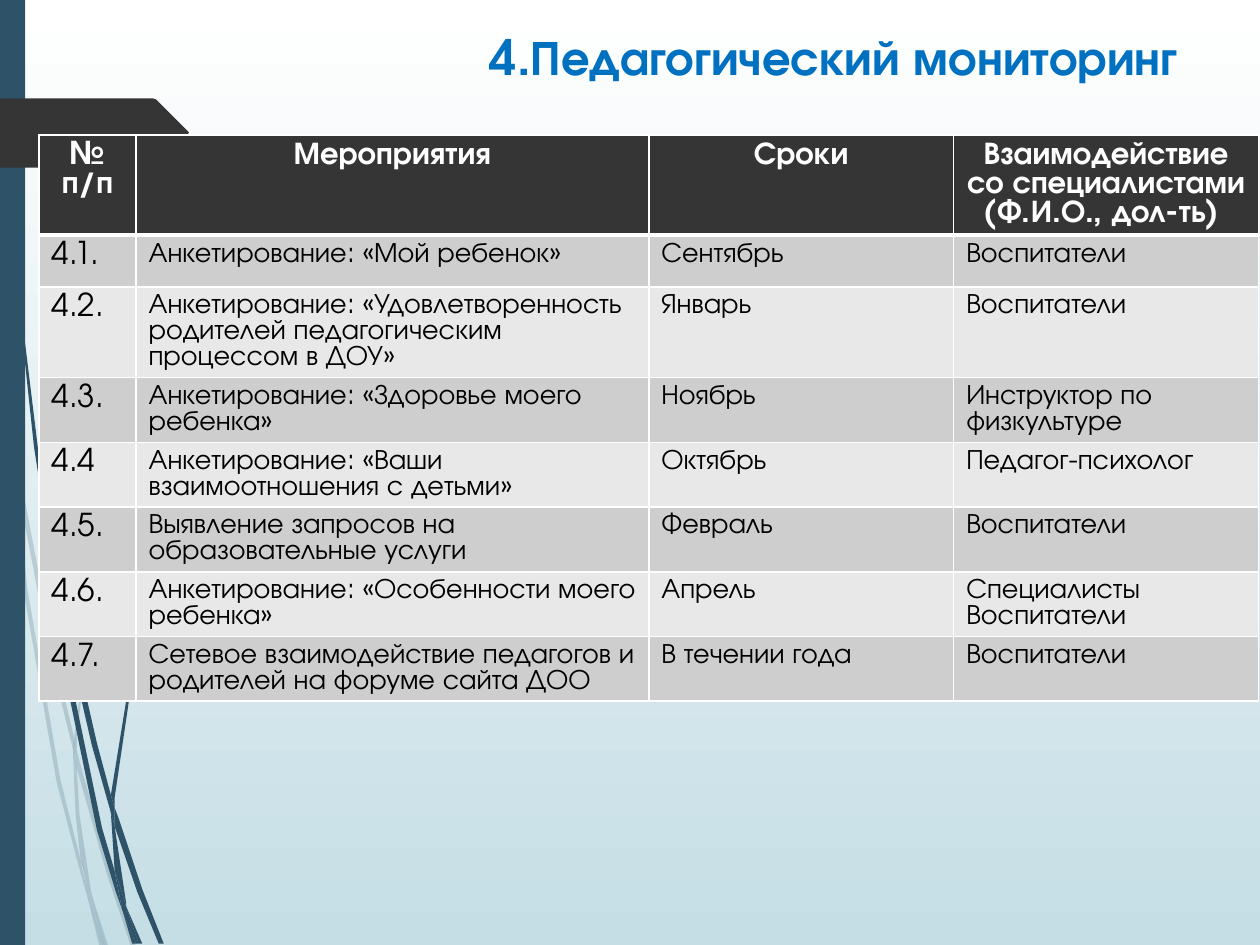
from lxml.etree import SubElement
from pptx import Presentation
from pptx.dml.color import RGBColor
from pptx.enum.shapes import MSO_SHAPE
from pptx.enum.text import MSO_ANCHOR, PP_ALIGN
from pptx.oxml.ns import qn
from pptx.util import Inches, Pt

WHITE = RGBColor(0xFF, 0xFF, 0xFF)
BLACK = RGBColor(0x00, 0x00, 0x00)
PALE_BLUE = RGBColor(0xC5, 0xDE, 0xE5)
NAVY = RGBColor(0x2E, 0x53, 0x69)
CHARCOAL = RGBColor(0x35, 0x35, 0x35)
TITLE_BLUE = RGBColor(0x00, 0x70, 0xC0)
ROW_FILLS = [RGBColor(0xCE, 0xCE, 0xCE), RGBColor(0xE8, 0xE8, 0xE8)]
FONT = "TeX Gyre Adventor"

# Outlines are in hundredths of an inch.
PALE_STEMS = [
    [(8, 350), (6, 322), (0, 282), (0, 299), (7, 344)],
    [(40, 522), (59, 599), (59, 586), (43, 520), (10, 345), (12, 376)],
    [(64, 607), (61, 596), (61, 610), (85, 694), (104, 751), (108, 751), (88, 692)],
    [(83, 751), (86, 751), (73, 711)],
    [(64, 683), (48, 619), (22, 469), (12, 376), (8, 350), (19, 470), (45, 621),
     (64, 693), (70, 714), (69, 707)],
    [(58, 599), (60, 646), (64, 683), (67, 692), (73, 711), (72, 706), (63, 646),
     (61, 610), (61, 608)],
    [(61, 584), (76, 462), (111, 349), (159, 245), (187, 198), (201, 175), (217, 154),
     (217, 153), (201, 175), (186, 197), (158, 244), (110, 348), (75, 461), (59, 584),
     (59, 586), (61, 596)],
    [(70, 714), (79, 751), (82, 751)],
    [(61, 608), (61, 610), (61, 596), (59, 586), (58, 599)],
    [(67, 692), (65, 683), (69, 707), (70, 714), (82, 751), (83, 751), (73, 711)],
]
DARK_STEMS = [
    [(5, 110), (14, 233), (27, 355), (46, 477), (47, 481), (45, 457), (45, 453),
     (30, 355), (15, 232), (6, 109), (4, 48), (3, 0), (2, 0), (3, 48)],
    [(73, 592), (88, 645), (88, 633), (88, 631), (77, 590), (50, 472), (53, 505)],
    [(94, 649), (91, 641), (91, 656), (109, 708), (126, 749), (130, 749), (113, 706)],
    [(91, 691), (81, 657), (60, 556), (53, 505), (47, 477), (56, 557), (77, 659),
     (92, 708), (97, 722), (96, 717)],
    [(110, 749), (113, 749), (100, 719)],
    [(91, 633), (103, 552), (131, 476), (169, 406), (191, 374), (203, 359), (216, 344),
     (215, 344), (203, 358), (191, 373), (168, 405), (129, 474), (101, 551), (88, 631),
     (91, 641)],
    [(97, 722), (105, 749), (108, 749)],
    [(88, 645), (91, 691), (96, 706), (100, 719), (100, 716), (91, 656), (90, 651)],
    [(88, 645), (90, 651), (91, 656), (91, 641), (88, 631), (88, 633)],
    [(96, 706), (91, 691), (96, 717), (97, 722), (108, 749), (110, 749), (100, 719)],
]
TAG = [(149, 107), (124, 132), (121, 133), (0, 133), (0, 78), (121, 78), (124, 79),
       (149, 104), (150, 105)]

HEADINGS = ["№ п/п", "Мероприятия", "Сроки",
            "Взаимодействие со специалистами (Ф.И.О., дол-ть) "]
ACTIVITIES = [
    ["4.1.", "Анкетирование: «Мой ребенок»", "Сентябрь", "Воспитатели"],
    ["4.2.", "Анкетирование: «Удовлетворенность родителей педагогическим процессом в ДОУ»",
     "Январь", "Воспитатели"],
    ["4.3.", "Анкетирование: «Здоровье моего ребенка»", "Ноябрь",
     "Инструктор по физкультуре"],
    ["4.4", "Анкетирование: «Ваши взаимоотношения с детьми»", "Октябрь",
     "Педагог-психолог"],
    ["4.5.", "Выявление запросов на образовательные услуги", "Февраль", "Воспитатели"],
    ["4.6.", "Анкетирование: «Особенности моего ребенка»", "Апрель",
     "Специалисты\nВоспитатели"],
    ["4.7.", "Сетевое взаимодействие педагогов и родителей на форуме сайта ДОО",
     "В течении года", "Воспитатели"],
]
COLUMN_WIDTHS = [0.77, 4.07, 2.42, 2.42]


def paint(shape, color, opacity=100):
    """Give the shape a flat fill without outline or shadow."""
    shape.shadow.inherit = False
    shape.line.fill.background()
    shape.fill.solid()
    shape.fill.fore_color.rgb = color
    if opacity < 100:
        tint = shape._element.spPr.find(qn("a:solidFill"))[0]
        SubElement(tint, qn("a:alpha"), val=str(opacity * 1000))


def draw_outline(shapes, points):
    builder = shapes.build_freeform(*points[0], scale=Inches(0.01))
    builder.add_line_segments(points[1:], close=True)
    return builder.convert_to_shape()


prs = Presentation()
prs.slide_width, prs.slide_height = Inches(10), Inches(7.5)
slide = prs.slides.add_slide(prs.slide_layouts[5])

backdrop = slide.background.fill
backdrop.gradient()
backdrop.gradient_angle = 270
for stop, color, position in zip(backdrop.gradient_stops, (WHITE, PALE_BLUE), (0, 1)):
    stop.color.rgb = color
    stop.position = position

# Grass stems, side band and tag
for stems, opacity in ((PALE_STEMS, 20), (DARK_STEMS, 100)):
    tuft = slide.shapes.add_group_shape()
    for stem in stems:
        paint(draw_outline(tuft.shapes, stem), NAVY, opacity)
side_band = slide.shapes.add_shape(MSO_SHAPE.RECTANGLE, 0, 0, Inches(0.2), Inches(7.5))
paint(side_band, NAVY)
paint(draw_outline(slide.shapes, TAG), CHARCOAL)

# Title
title = slide.shapes.title
for side, length in {"left": 0.45, "top": 0.13, "width": 9, "height": 0.63}.items():
    setattr(title, side, Inches(length))
title.text_frame.text = "4.Педагогический мониторинг"
title.text_frame.vertical_anchor = MSO_ANCHOR.MIDDLE
heading = title.text_frame.paragraphs[0]
heading.alignment = PP_ALIGN.RIGHT
for attribute, value in {"name": FONT, "size": Pt(27.9), "bold": True}.items():
    setattr(heading.font, attribute, value)
heading.font.color.rgb = TITLE_BLUE

# Monitoring plan
rows = [HEADINGS] + ACTIVITIES
plan = slide.shapes.add_table(len(rows), len(HEADINGS), Inches(0.31), Inches(1.07),
                              Inches(sum(COLUMN_WIDTHS)), Inches(0.41 * len(rows))).table
for column, width in zip(plan.columns, COLUMN_WIDTHS):
    column.width = Inches(width)

for row_index, row in enumerate(rows):
    is_header = row_index == 0
    for column_index, text in enumerate(row):
        cell = plan.cell(row_index, column_index)
        cell.text = text
        for edge in ("lnL", "lnR", "lnT", "lnB"):
            heavy = (is_header and edge == "lnB") or (row_index == 1 and edge == "lnT")
            border = SubElement(cell._tc.get_or_add_tcPr(), qn(f"a:{edge}"),
                                w=str(Pt(3 if heavy else 1)))
            stroke = SubElement(border, qn("a:solidFill"))
            SubElement(stroke, qn("a:srgbClr"), val=str(WHITE))
        cell.fill.solid()
        cell.fill.fore_color.rgb = CHARCOAL if is_header else ROW_FILLS[(row_index - 1) % 2]
        font_values = {"name": FONT, "bold": is_header,
                       "size": Pt(18 if is_header or column_index == 0 else 16)}
        for paragraph in cell.text_frame.paragraphs:
            paragraph.alignment = PP_ALIGN.CENTER if is_header else PP_ALIGN.LEFT
            for attribute, value in font_values.items():
                setattr(paragraph.font, attribute, value)
            paragraph.font.color.rgb = WHITE if is_header else BLACK

prs.save("out.pptx")
